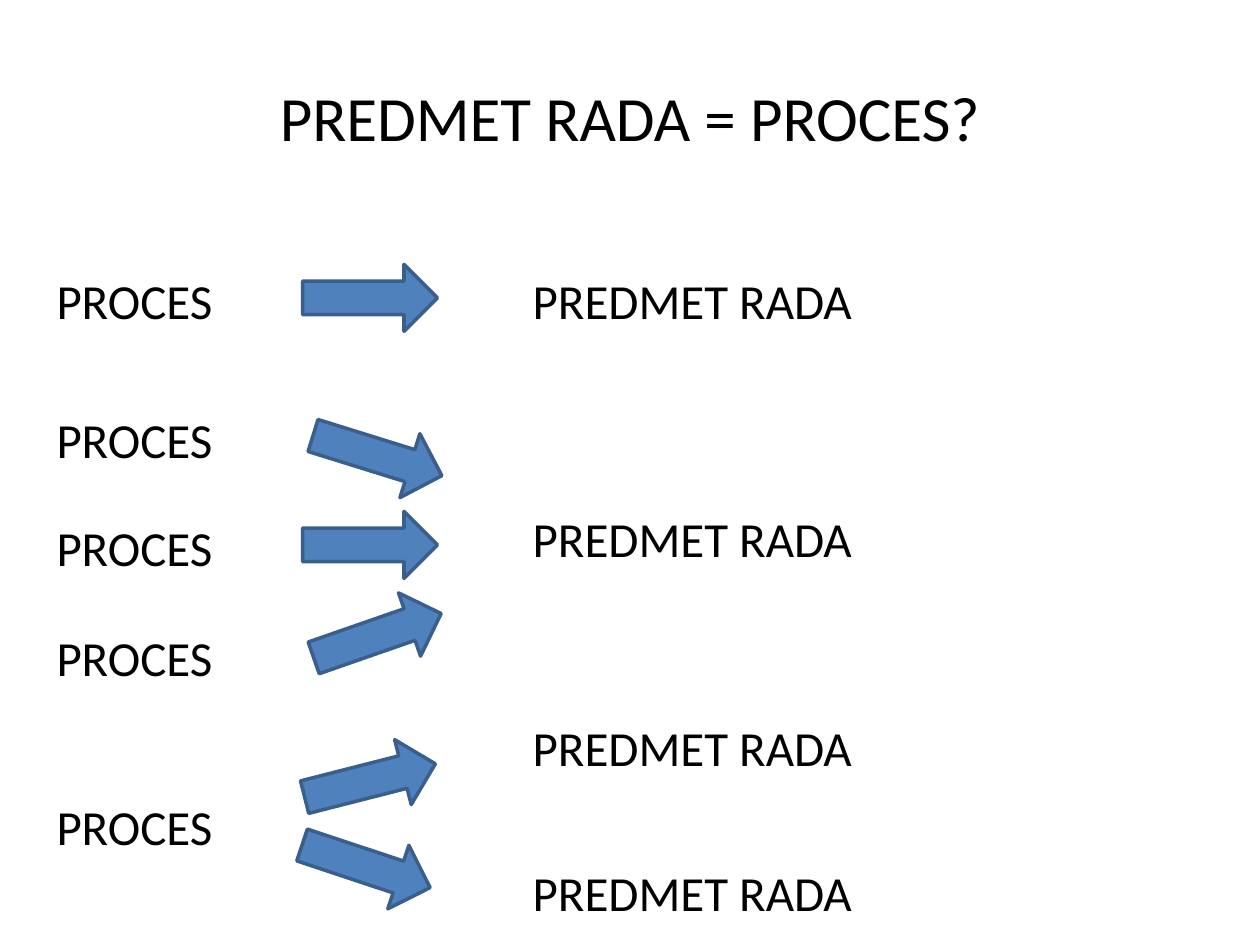
from pptx import Presentation, util as u
from pptx.dml.color import RGBColor
from pptx.enum import shapes, text

Cm = u.Cm


def paint(color, code):
    color.rgb = RGBColor.from_string(code)


def label(words, x, y, w, h, size):
    box = slide.shapes.add_textbox(Cm(x), Cm(y), Cm(w), Cm(h))
    frame = box.text_frame
    frame.word_wrap = True
    frame.text = words
    para = frame.paragraphs[0]
    para.font.name = "Calibri"
    para.font.size = u.Pt(size)
    paint(para.font.color, "000000")
    return frame


deck = Presentation()
deck.slide_width, deck.slide_height = Cm(25.4), Cm(19.05)
slide = deck.slides.add_slide(deck.slide_layouts[6])

title = label("PREDMET RADA = PROCES?", 1.27, 0.76, 22.86, 3.18, 36)
title.vertical_anchor = text.MSO_ANCHOR.MIDDLE
title.paragraphs[0].alignment = text.PP_ALIGN.CENTER

# Each column: wording, left, width, tops
columns = [
    ("PROCES", 0.89, 4.39, [5.33, 8.13, 10.31, 12.52, 15.93]),
    ("PREDMET RADA", 10.49, 10.01, [5.33, 10.13, 14.33, 17.27]),
]
for words, left, width, tops in columns:
    for top in tops:
        frame = label(words, left, top, width, 1.45, 28)
        frame.auto_size = text.MSO_AUTO_SIZE.SHAPE_TO_FIT_TEXT

# Each arrow: left, top, turn in degrees
arrows = [
    (6.1, 5.33, 0),
    (6.25, 8.51, 17.3),
    (6.1, 10.31, 0),
    (6.25, 12.14, -19.2),
    (6.1, 15.06, -14.3),
    (6.02, 16.79, 18.4),
]
for left, top, turn in arrows:
    arrow = slide.shapes.add_shape(
        shapes.MSO_SHAPE.RIGHT_ARROW, Cm(left), Cm(top), Cm(2.72), Cm(1.35))
    arrow.rotation = turn
    arrow.shadow.inherit = False
    arrow.fill.solid()
    paint(arrow.fill.fore_color, "4F81BD")
    paint(arrow.line.color, "3A5F8C")
    arrow.line.width = u.Pt(2)

deck.save("out.pptx")
